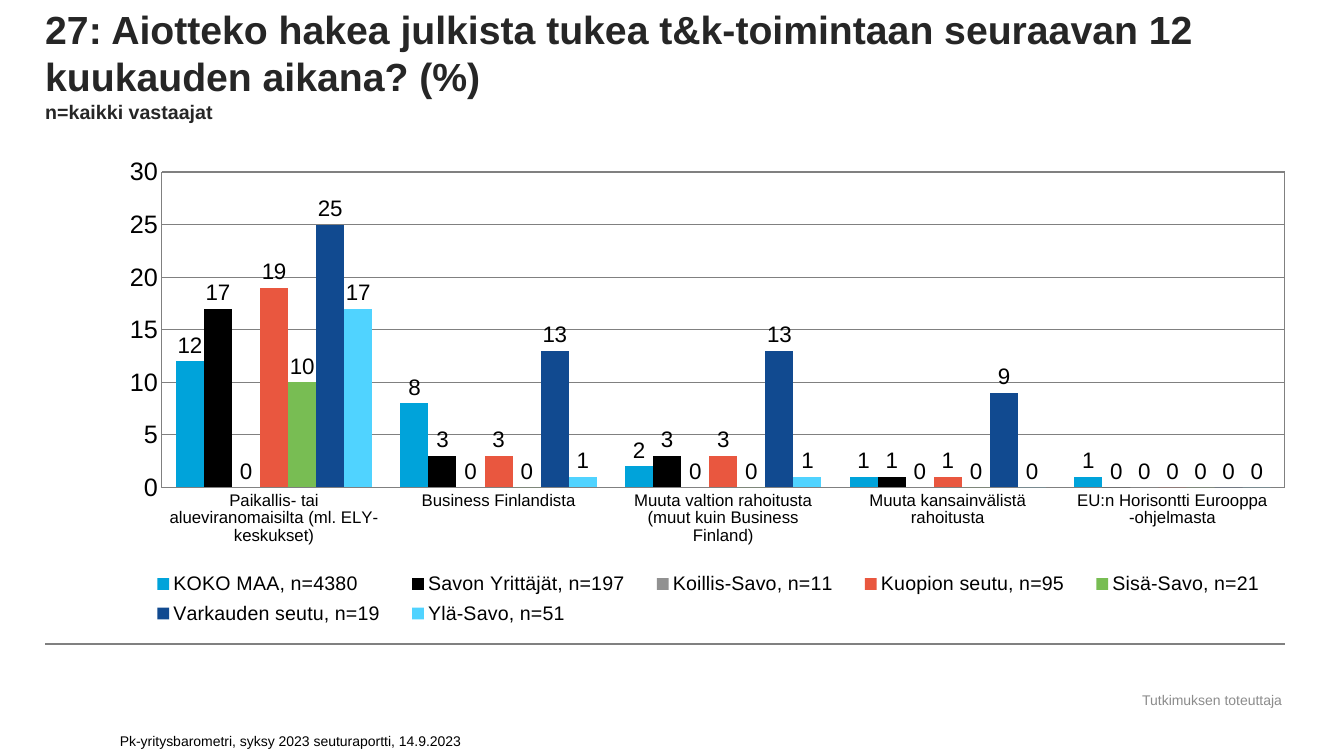
from dataclasses import dataclass

from lxml.etree import SubElement
from pptx import Presentation
from pptx.chart.data import CategoryChartData
from pptx.dml.color import RGBColor
from pptx.enum.chart import XL_CHART_TYPE as ChartType
from pptx.enum.chart import XL_LABEL_POSITION as LabelPos
from pptx.enum.chart import XL_LEGEND_POSITION as LegendPos
from pptx.enum.chart import XL_TICK_MARK as Tick
from pptx.enum.shapes import MSO_CONNECTOR as Connector
from pptx.enum.text import MSO_ANCHOR as Anchor
from pptx.enum.text import MSO_AUTO_SIZE as AutoSize
from pptx.enum.text import PP_ALIGN as Align
from pptx.oxml import parse_xml
from pptx.oxml.ns import nsdecls, qn
from pptx.util import Cm, Pt

FONT = "Arial"
BLACK, GRAY = "000000", "808080"
LEFT, WIDTH = Cm(1.14), Cm(31.25)


@dataclass
class Region:
    name: str
    color: str
    values: tuple[int, ...]


@dataclass
class Label:
    text: str
    box: tuple[float, float, float, float]
    color: str
    align: Align
    anchor: Anchor


CATEGORIES = (
    "Paikallis- tai alueviranomaisilta (ml. ELY-keskukset)",
    "Business Finlandista",
    "Muuta valtion rahoitusta (muut kuin Business Finland)",
    "Muuta kansainvälistä rahoitusta",
    "EU:n Horisontti Eurooppa -ohjelmasta",
)
REGIONS = (
    Region("KOKO MAA, n=4380", "00A3DA", (12, 8, 2, 1, 1)),
    Region("Savon Yrittäjät, n=197", "000000", (17, 3, 3, 1, 0)),
    Region("Koillis-Savo, n=11", "919191", (0, 0, 0, 0, 0)),
    Region("Kuopion seutu, n=95", "E9573F", (19, 3, 3, 1, 0)),
    Region("Sisä-Savo, n=21", "78BD53", (10, 0, 0, 0, 0)),
    Region("Varkauden seutu, n=19", "114A90", (25, 13, 13, 9, 0)),
    Region("Ylä-Savo, n=51", "50D3FF", (17, 1, 1, 0, 0)),
)
LABELS = (
    Label("Tutkimuksen toteuttaja", (28.35, 17.32, 4.39, 0.66), "8C8C8C",
          Align.CENTER, Anchor.MIDDLE),
    Label("Pk-yritysbarometri, syksy 2023 seuturaportti, 14.9.2023",
          (2.77, 18.11, 13.74, 0.89), BLACK, Align.LEFT, Anchor.BOTTOM),
)


def rgb(color: str) -> RGBColor:
    return RGBColor.from_string(color)


def set_font(font, size: float, color: str = BLACK, bold: bool = False) -> None:
    font.name, font.size, font.bold = FONT, Pt(size), bold
    font.color.rgb = rgb(color)


def set_line(line, color: str, width: float) -> None:
    line.color.rgb = rgb(color)
    line.width = Pt(width)


def add_title(s) -> None:
    sp = s.shapes.title
    sp.left, sp.top, sp.width, sp.height = LEFT, Cm(0), WIDTH, Cm(3.1)
    tf = sp.text_frame
    tf.auto_size, tf.word_wrap = AutoSize.NONE, True
    tf.vertical_anchor = Anchor.BOTTOM
    tf.margin_left = tf.margin_right = tf.margin_top = tf.margin_bottom = 0
    p = tf.paragraphs[0]
    p.alignment = Align.LEFT
    r = p.add_run()
    r.text = "27: Aiotteko hakea julkista tukea t&k-toimintaan seuraavan 12 kuukauden aikana? (%)"
    set_font(r.font, 28, "262626", True)
    p.add_line_break()
    r = p.add_run()
    r.text = "n=kaikki vastaajat"
    set_font(r.font, 14, "262626", True)


def add_label(s, label: Label) -> None:
    tf = s.shapes.add_textbox(*map(Cm, label.box)).text_frame
    tf.word_wrap, tf.vertical_anchor = True, label.anchor
    p = tf.paragraphs[0]
    p.alignment = label.align
    r = p.add_run()
    r.text = label.text
    set_font(r.font, 10, label.color)


def add_rule(s) -> None:
    y = Cm(16.23)
    rule = s.shapes.add_connector(Connector.STRAIGHT, LEFT, y, LEFT + WIDTH, y)
    set_line(rule.line, GRAY, 1.5)
    SubElement(rule._element.spPr, qn("a:effectLst"))


def set_layout(parent, index: int, x: float, y: float, w: float, h: float,
               inner: bool = False) -> None:
    """Place a chart part by fractions of the chart's size."""
    for old in parent.findall(qn("c:layout")):
        parent.remove(old)
    target = '<c:layoutTarget val="inner"/>' if inner else ""
    parent.insert(index, parse_xml(
        f'<c:layout {nsdecls("c")}><c:manualLayout>{target}'
        '<c:xMode val="edge"/><c:yMode val="edge"/>'
        f'<c:x val="{x}"/><c:y val="{y}"/><c:w val="{w}"/><c:h val="{h}"/>'
        '</c:manualLayout></c:layout>'))


def format_axes(chart) -> None:
    for axis, size in ((chart.category_axis, 12), (chart.value_axis, 18)):
        axis.major_tick_mark = axis.minor_tick_mark = Tick.NONE
        set_font(axis.tick_labels.font, size)
        set_line(axis.format.line, GRAY, 0.75)
    axis = chart.value_axis
    axis.minimum_scale, axis.maximum_scale, axis.major_unit = 0, 30, 5
    axis.has_major_gridlines = True
    set_line(axis.major_gridlines.format.line, GRAY, 0.75)


def format_bars(plot) -> None:
    plot.gap_width, plot.overlap = 100, 0
    plot.vary_by_categories = False
    for series, region in zip(plot.series, REGIONS):
        series.format.fill.solid()
        series.format.fill.fore_color.rgb = rgb(region.color)
        series.invert_if_negative = False
        labels = series.data_labels
        labels.show_value, labels.position = True, LabelPos.OUTSIDE_END
        labels.number_format, labels.number_format_is_linked = "#,##0", False
        set_font(labels.font, 16)


def add_region_chart(s) -> None:
    data = CategoryChartData()
    data.categories = CATEGORIES
    for region in REGIONS:
        data.add_series(region.name, region.values)
    chart = s.shapes.add_chart(ChartType.COLUMN_CLUSTERED, LEFT, Cm(3.94),
                               WIDTH, Cm(11.99), data).chart
    chart.has_title = False
    set_font(chart.font, 18)
    format_axes(chart)
    format_bars(chart.plots[0])

    chart.has_legend = True
    legend = chart.legend
    legend.position, legend.include_in_layout = LegendPos.RIGHT, False
    set_font(legend.font, 14)
    set_layout(legend._element, 1, 0.07, 0.86, 0.93, 0.14)

    plot_area = chart._chartSpace.chart.plotArea
    set_layout(plot_area, 0, 0.094, 0.033, 0.906, 0.663, inner=True)
    plot_area.append(parse_xml(
        f'<c:spPr {nsdecls("c", "a")}><a:noFill/><a:ln w="9525"><a:solidFill>'
        f'<a:srgbClr val="{GRAY}"/></a:solidFill></a:ln></c:spPr>'))


def main() -> None:
    prs = Presentation()
    prs.slide_width, prs.slide_height = Cm(33.87), Cm(19.05)
    s = prs.slides.add_slide(prs.slide_layouts.get_by_name("Title Only"))
    add_title(s)
    add_rule(s)
    for label in LABELS:
        add_label(s, label)
    add_region_chart(s)
    prs.save("out.pptx")


if __name__ == "__main__":
    main()
